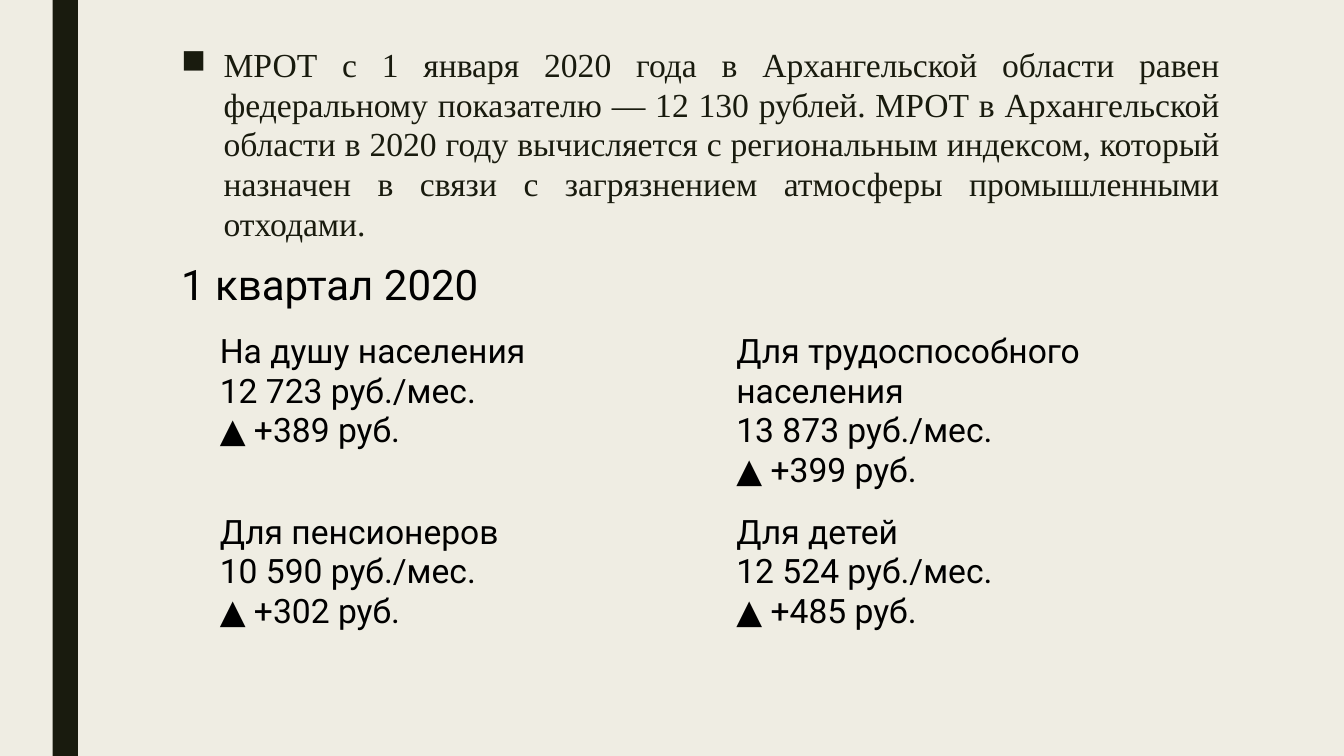
from dataclasses import dataclass

import pptx
import pptx.dml.color
import pptx.enum.shapes
import pptx.enum.text
import pptx.oxml.ns
import pptx.util
from lxml import etree

Pt = pptx.util.Pt
Align = pptx.enum.text.PP_ALIGN


@dataclass(frozen=True)
class Theme:
    background: str = "EFEDE3"
    dark: str = "191B0E"
    black: str = "000000"
    serif: str = "Times New Roman"
    sans: str = "Roboto"
    body_size: int = 24
    heading_size: int = 30
    line_spacing: float = 0.98


THEME = Theme()
NO_GRID_STYLE = "{2D5ABB26-0587-4C30-8999-92F81FD0307C}"

WAGE_TEXT = (
    "МРОТ с 1 января 2020 года в Архангельской области равен федеральному "
    "показателю — 12 130 рублей. МРОТ в Архангельской области в 2020 году "
    "вычисляется с региональным индексом, который назначен в связи с "
    "загрязнением атмосферы промышленными отходами."
)
QUARTER_TEXT = "1 квартал 2020"
LIVING_COSTS = [
    [
        ("На душу населения", "12 723 руб./мес.", "▲ +389 руб."),
        ("Для трудоспособного населения", "13 873 руб./мес.", "▲ +399 руб."),
    ],
    [
        ("Для пенсионеров", "10 590 руб./мес.", "▲ +302 руб."),
        ("Для детей", "12 524 руб./мес.", "▲ +485 руб."),
    ],
]


def rgb(color):
    return pptx.dml.color.RGBColor.from_string(color)


def add_run(paragraph, text, font, size, color):
    run = paragraph.add_run()
    run.text = text
    run.font.name = font
    run.font.size = Pt(size)
    run.font.color.rgb = rgb(color)


def add_side_bar(slide):
    bar = slide.shapes.add_shape(
        pptx.enum.shapes.MSO_SHAPE.RECTANGLE, Pt(37.6), Pt(0), Pt(18), Pt(540)
    )
    bar.shadow.inherit = False
    bar.fill.solid()
    bar.fill.fore_color.rgb = rgb(THEME.dark)
    bar.line.fill.background()


def add_bullet(paragraph, symbol, indent):
    properties = paragraph._p.get_or_add_pPr()
    properties.set("marL", str(Pt(indent)))
    properties.set("indent", str(-Pt(indent)))
    bullet = etree.SubElement(properties, pptx.oxml.ns.qn("a:buChar"))
    bullet.set("char", symbol)


def format_body_paragraph(paragraph, space_before):
    paragraph.alignment = Align.JUSTIFY
    paragraph.line_spacing = THEME.line_spacing
    paragraph.space_before = Pt(space_before)
    paragraph.space_after = Pt(2)


def add_body(slide):
    box = slide.shapes.add_textbox(Pt(122.4), Pt(29.5), Pt(756), Pt(473.8))
    frame = box.text_frame
    frame.word_wrap = True
    wage = frame.paragraphs[0]
    format_body_paragraph(wage, 0)
    add_bullet(wage, "■", 30.24)
    add_run(wage, WAGE_TEXT, THEME.serif, THEME.body_size, THEME.dark)
    quarter = frame.add_paragraph()
    format_body_paragraph(quarter, 10)
    add_run(quarter, QUARTER_TEXT, THEME.sans, THEME.heading_size, THEME.black)


def fill_cell(cell, lines):
    cell.fill.background()
    frame = cell.text_frame
    for index, line in enumerate(lines):
        paragraph = frame.add_paragraph() if index else frame.paragraphs[0]
        paragraph.alignment = Align.LEFT
        add_run(paragraph, line, THEME.sans, THEME.body_size, THEME.black)


def add_cost_table(slide):
    frame = slide.shapes.add_table(
        len(LIVING_COSTS), len(LIVING_COSTS[0]), Pt(149.8), Pt(234), Pt(738), Pt(257.8)
    )
    table = frame.table
    table.first_row = False
    table.horz_banding = False
    style = table._tbl.tblPr.find(pptx.oxml.ns.qn("a:tableStyleId"))
    style.text = NO_GRID_STYLE
    for row, groups in zip(table.rows, LIVING_COSTS):
        for cell, lines in zip(row.cells, groups):
            fill_cell(cell, lines)


def main():
    presentation = pptx.Presentation()
    presentation.slide_width = Pt(960)
    presentation.slide_height = Pt(540)
    slide = presentation.slides.add_slide(presentation.slide_layouts[6])
    slide.background.fill.solid()
    slide.background.fill.fore_color.rgb = rgb(THEME.background)
    add_side_bar(slide)
    add_body(slide)
    add_cost_table(slide)
    presentation.save("out.pptx")


if __name__ == "__main__":
    main()
